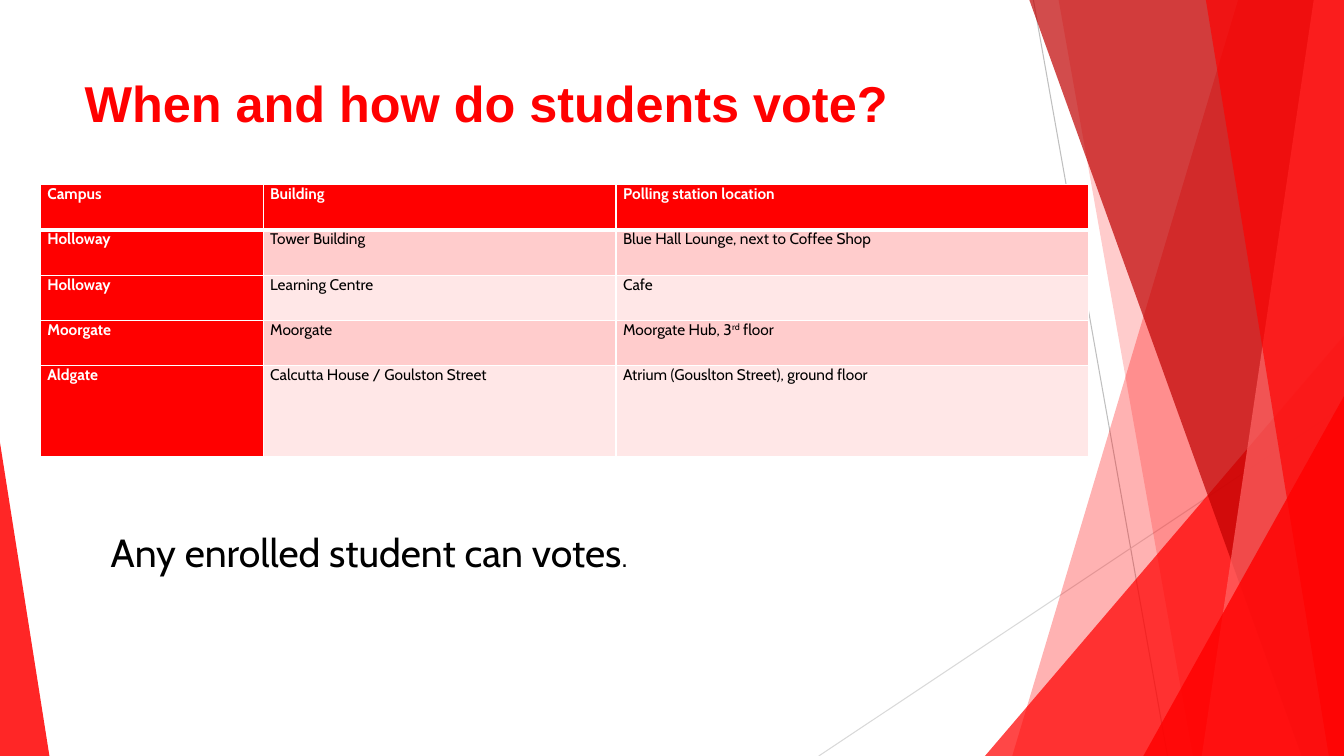
from pptx import Presentation
from pptx.dml.color import RGBColor
from pptx.enum.shapes import MSO_CONNECTOR, MSO_SHAPE
from pptx.enum.text import MSO_ANCHOR, MSO_AUTO_SIZE, PP_ALIGN
from pptx.oxml import parse_xml
from pptx.oxml.ns import nsdecls, qn
from pptx.oxml.xmlchemy import OxmlElement
from pptx.util import Inches, Pt

HUES = {
    "red": "FF0000", "dark": "BF0000", "coral": "FF6666",
    "rose": "FFCCCC", "blush": "FFE7E7", "white": "FFFFFF",
    "black": "000000", "gray": "BFBFBF", "mist": "D9D9D9",
}
ROWS = [
    ["Campus", "Building", "Polling station location"],
    ["Holloway", "Tower Building", "Blue Hall Lounge, next to Coffee Shop"],
    ["Holloway", "Learning Centre", "Cafe"],
    ["Moorgate", "Moorgate", ["Moorgate Hub, 3", "rd", " floor"]],
    ["Aldgate", "Calcutta House / Goulston Street",
     "Atrium (Gouslton Street), ground floor"],
]


def write(para, text, font="Cabin", size=11, hue="black", bold=False, lift=0):
    run = para.add_run()
    run.text = text
    run.font.name = font
    run.font.size = Pt(size)
    run.font.bold = bold
    run.font.color.rgb = RGBColor.from_string(HUES[hue])
    if lift:
        run.font._element.set("baseline", str(lift * 1000))


class Deck:
    def __init__(self):
        self.show = Presentation()
        self.show.slide_width = Inches(13.33)
        self.show.slide_height = Inches(7.5)
        self.page = self.show.slides.add_slide(self.show.slide_layouts[5])
        self.shapes = self.page.shapes

    def wide(self, share):
        return round(self.show.slide_width * share / 100)

    def high(self, share):
        return round(self.show.slide_height * share / 100)

    def box(self, left, top, width, height):
        return self.wide(left), self.high(top), self.wide(width), self.high(height)

    def line(self, start, end, hue):
        line = self.shapes.add_connector(
            MSO_CONNECTOR.STRAIGHT, self.wide(start[0]), self.high(start[1]),
            self.wide(end[0]), self.high(end[1]))
        line.line.color.rgb = RGBColor.from_string(HUES[hue])
        line.line.width = Pt(0.75)
        line._element.spPr.append(OxmlElement("a:effectLst"))

    def paint(self, shape, hue, alpha):
        shape.shadow.inherit = False
        shape.line.fill.background()
        shape.fill.solid()
        shape.fill.fore_color.rgb = RGBColor.from_string(HUES[hue])
        tint = OxmlElement("a:alpha")
        tint.set("val", str(alpha * 1000))
        shape._element.spPr.find(".//" + qn("a:srgbClr")).append(tint)

    def strip(self, top, base, hue, alpha):
        pen = self.shapes.build_freeform(self.wide(top), 0)
        pen.add_line_segments([
            (self.wide(x), self.high(y))
            for x, y in [(100, 0), (100, 100), (base, 100)]])
        self.paint(pen.convert_to_shape(), hue, alpha)

    def wedge(self, left, top, width, peak, alpha):
        shape = self.shapes.add_shape(
            MSO_SHAPE.ISOSCELES_TRIANGLE, *self.box(left, top, width, 100 - top))
        shape.adjustments[0] = peak
        self.paint(shape, "red", alpha)

    def title(self, text, place):
        head = self.shapes.title
        head.left, head.top, head.width, head.height = self.box(*place)
        frame = head.text_frame
        frame.auto_size = MSO_AUTO_SIZE.NONE
        frame.vertical_anchor = MSO_ANCHOR.TOP
        para = frame.paragraphs[0]
        para.alignment = PP_ALIGN.LEFT
        write(para, text, font="Arial", size=36, hue="red", bold=True)
        tree = head._element.getparent()
        tree.append(head._element)

    def note(self, text, mark, place):
        frame = self.shapes.add_textbox(*self.box(*place)).text_frame
        frame.word_wrap = True
        para = frame.paragraphs[0]
        write(para, text, size=28)
        write(para, mark, font="Arial", size=18)

    def edge(self, cell, row):
        widths = {"L": 1, "R": 1, "T": 3 if row == 1 else 1, "B": 1 if row else 3}
        for spot, (side, width) in enumerate(widths.items()):
            cell._tc.get_or_add_tcPr().insert(spot, parse_xml(
                f'<a:ln{side} {nsdecls("a")} w="{Pt(width)}"><a:solidFill>'
                f'<a:srgbClr val="{HUES["white"]}"/></a:solidFill></a:ln{side}>'))

    def cell(self, cell, text, row, col):
        cell.margin_left = cell.margin_right = Inches(0.07)
        cell.margin_top = cell.margin_bottom = 0
        head = row == 0 or col == 0
        hue = "red" if head else "rose" if row % 2 else "blush"
        cell.fill.solid()
        cell.fill.fore_color.rgb = RGBColor.from_string(HUES[hue])
        self.edge(cell, row)
        parts = [text] if isinstance(text, str) else text
        for spot, part in enumerate(parts):
            write(cell.text_frame.paragraphs[0], part, bold=head,
                  hue="white" if head else "black", lift=30 * (spot % 2))

    def table(self, rows, left, top, widths, heights):
        place = self.box(left, top, sum(widths), sum(heights))
        grid = self.shapes.add_table(len(rows), len(widths), *place).table
        for col, width in zip(grid.columns, widths):
            col.width = self.wide(width)
        for row, height in zip(grid.rows, heights):
            row.height = self.high(height)
        for r, row in enumerate(rows):
            for c, text in enumerate(row):
                self.cell(grid.cell(r, c), text, r, c)


def main():
    deck = Deck()
    deck.line((76.89, 0), (86.87, 100), "gray")
    deck.line((100, 53.73), (60.92, 100), "mist")
    deck.strip(92.12, 75.32, "red", 30)
    deck.strip(78.77, 88.75, "red", 20)
    deck.wedge(73.29, 44.4, 26.71, 1, 72)
    deck.strip(76.59, 96.85, "dark", 70)
    deck.strip(97.75, 89.42, "coral", 70)
    deck.strip(89.72, 98.87, "red", 65)
    deck.wedge(85.07, 52.4, 14.93, 1, 80)
    deck.wedge(0, 58.53, 3.68, 0, 85)
    deck.title("When and how do students vote?", (5.55, 8.93, 70.52, 19.2))
    deck.table(ROWS, 3, 24.4, [16.58, 26.26, 35.18], [6, 6, 6, 6, 12])
    deck.note("Any enrolled student can votes", ".", (7.5, 69.2, 64, 7.6))
    deck.show.save("out.pptx")


if __name__ == "__main__":
    main()
